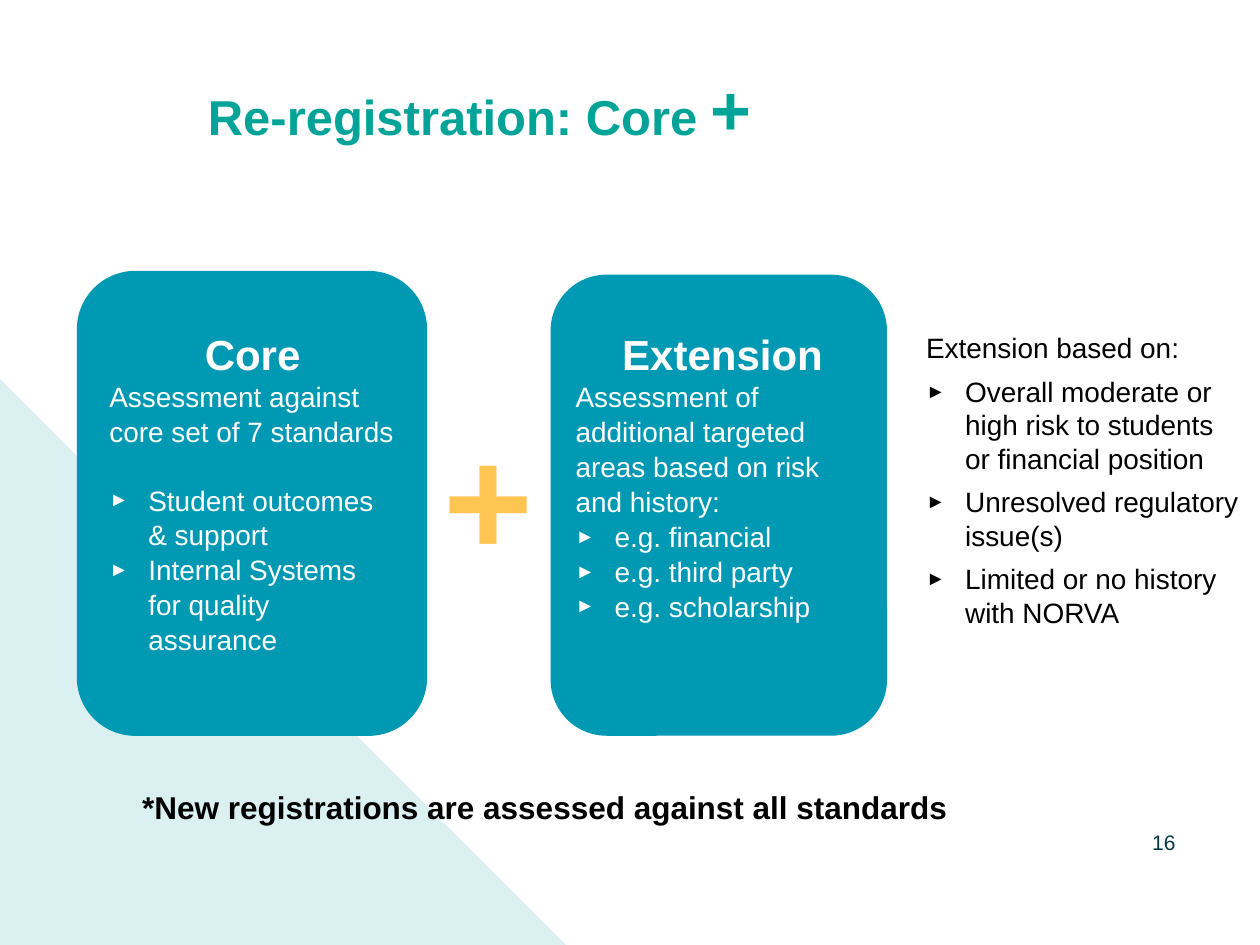
"""Build the slide on core and extension assessment for re-registration."""
from lxml.etree import SubElement
from pptx import Presentation
from pptx.dml.color import RGBColor
from pptx.enum.shapes import MSO_SHAPE
from pptx.enum.text import MSO_ANCHOR, PP_ALIGN
from pptx.oxml.ns import qn
from pptx.util import Inches, Pt

PALE = RGBColor(0xDA, 0xF0, 0xF1)
GREEN = RGBColor(0x00, 0xA3, 0x98)
BLUE = RGBColor(0x00, 0x99, 0xB3)
YELLOW = RGBColor(0xFE, 0xC5, 0x53)
NAVY = RGBColor(0x00, 0x3B, 0x45)
WHITE = RGBColor(0xFF, 0xFF, 0xFF)
BLACK = RGBColor(0x00, 0x00, 0x00)


def add_frame(left, top, width, height, inset=True):
    box = slide.shapes.add_textbox(Inches(left), Inches(top), Inches(width), Inches(height))
    frame = box.text_frame
    frame.word_wrap = True
    if not inset:
        frame.margin_left = frame.margin_right = frame.margin_top = frame.margin_bottom = 0
    return frame


def add_text(frame, text, size=16, color=BLACK, bold=False, align=PP_ALIGN.LEFT,
             spacing=1.04, before=0, indent=0, bullet=False, same_line=False):
    paragraph = frame.paragraphs[-1]
    if not same_line:
        if paragraph.runs:
            paragraph = frame.add_paragraph()
        paragraph.alignment = align
        paragraph.line_spacing = spacing
        paragraph.space_before = Pt(before)
        properties = paragraph._p.get_or_add_pPr()
        if bullet:
            indent = 0.31
            properties.set("indent", str(Inches(-indent)))
            SubElement(properties, qn("a:buSzPct"), val="70000")
            SubElement(properties, qn("a:buFont"), typeface="Arial")
            SubElement(properties, qn("a:buChar"), char="►")
        properties.set("marL", str(Inches(indent)))
    run = paragraph.add_run()
    run.text = text
    run.font.name = "Arial"
    run.font.size = Pt(size)
    run.font.bold = bold
    run.font.color.rgb = color


presentation = Presentation()
presentation.slide_width = Inches(10)
presentation.slide_height = Inches(7.5)
slide = presentation.slides.add_slide(presentation.slide_layouts[6])

for kind, left, top, width, height, color in [
    (MSO_SHAPE.RIGHT_TRIANGLE, 0, 3.01, 4.49, 4.49, PALE),
    (MSO_SHAPE.ROUNDED_RECTANGLE, 0.61, 2.15, 2.78, 3.69, BLUE),
    (MSO_SHAPE.ROUNDED_RECTANGLE, 4.37, 2.18, 2.67, 3.66, BLUE),
]:
    shape = slide.shapes.add_shape(kind, Inches(left), Inches(top), Inches(width), Inches(height))
    shape.shadow.inherit = False
    shape.fill.solid()
    shape.fill.fore_color.rgb = color
    shape.line.fill.background()

title = add_frame(1.65, 0.8, 7.68, 0.5, inset=False)
add_text(title, "Re-registration: Core ", size=28, color=GREEN, bold=True, spacing=Pt(28))
add_text(title, "+", size=40, color=GREEN, bold=True, same_line=True)

reasons = add_frame(7.35, 2.63, 2.49, 2.87, inset=False)
add_text(reasons, "Extension based on:", spacing=Pt(19), before=6)
for reason in [
    "Overall moderate or high risk to students or financial position",
    "Unresolved regulatory issue(s)",
    "Limited or no history with NORVA",
]:
    add_text(reasons, reason, spacing=Pt(19), before=6, bullet=True)

plus = add_frame(3.39, 3.09, 0.98, 1.58)
add_text(plus, "+", size=88, color=YELLOW, bold=True, align=PP_ALIGN.CENTER)

core = add_frame(0.77, 2.54, 2.47, 2.39)
add_text(core, "Core", size=24, color=WHITE, bold=True, align=PP_ALIGN.CENTER)
add_text(core, "Assessment against core set of 7 standards", color=WHITE)
add_text(core, "Student outcomes & support", color=WHITE, before=19, bullet=True)
add_text(core, "Internal Systems for quality assurance", color=WHITE, bullet=True)

extension = add_frame(4.47, 2.54, 2.46, 2.73)
add_text(extension, "Extension", size=24, color=WHITE, bold=True, indent=0.37)
add_text(extension, "Assessment of additional targeted areas based on risk and history:", color=WHITE)
for example in ["financial", "third party", "scholarship"]:
    add_text(extension, f"e.g. {example}", color=WHITE, bullet=True)

footnote = add_frame(1.03, 6.19, 6.87, 0.41)
add_text(footnote, "*New registrations are assessed against all standards", size=18, bold=True)

number = add_frame(8.66, 6.38, 0.67, 0.4, inset=False)
number.vertical_anchor = MSO_ANCHOR.BOTTOM
add_text(number, "16", size=12, color=NAVY, align=PP_ALIGN.RIGHT, spacing=1.0)

presentation.save("out.pptx")
